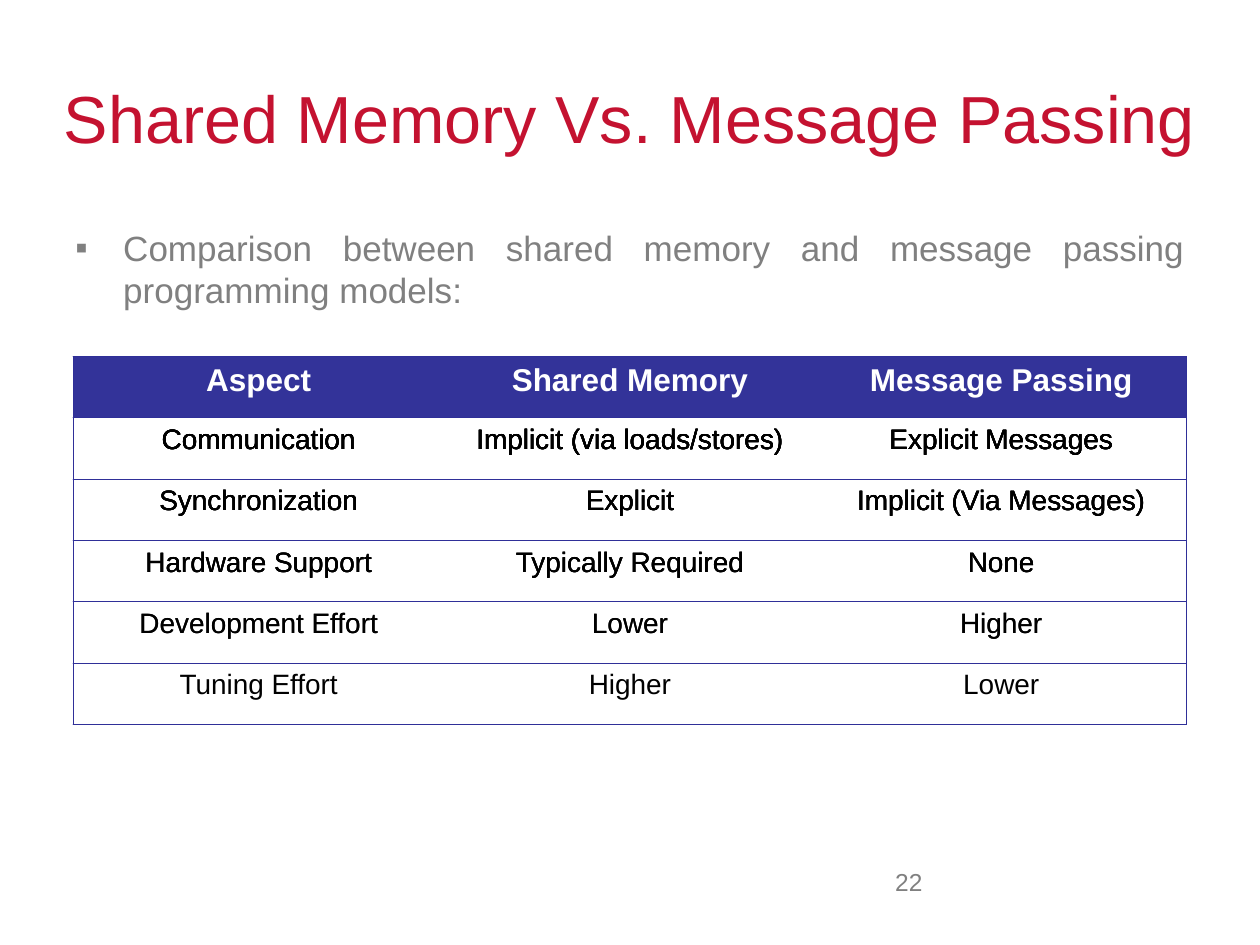
from lxml import etree
from pptx import Presentation
from pptx.dml.color import RGBColor
from pptx.enum.text import MSO_ANCHOR, PP_ALIGN
from pptx.oxml.ns import qn
from pptx.util import Inches, Pt

TITLE = "Shared Memory Vs. Message Passing"
INTRO = "Comparison between shared memory and message passing programming models:"
PAGE = "22"
ROWS = [
    ("Aspect", "Shared Memory", "Message Passing"),
    ("Communication", "Implicit (via loads/stores)", "Explicit Messages"),
    ("Synchronization", "Explicit", "Implicit (Via Messages)"),
    ("Hardware Support", "Typically Required", "None"),
    ("Development Effort", "Lower", "Higher"),
    ("Tuning Effort", "Higher", "Lower"),
]
RED, GRAY, BLACK, WHITE = "C41230", "808080", "000000", "FFFFFF"
HEADER, RULE = "333399", "2F2F98"


def rgb(value):
    return RGBColor.from_string(value)


def write(tf, text, size, color, align, bold=False):
    p = tf.paragraphs[0]
    p.alignment = align
    r = p.add_run()
    r.text = text
    r.font.name = "Arial"
    r.font.size = Pt(size)
    r.font.bold = bold
    r.font.color.rgb = rgb(color)
    return p


def add_text_frame(s, left, top, width, height):
    sp = s.shapes.add_textbox(Inches(left), Inches(top), Inches(width), Inches(height))
    sp.text_frame.word_wrap = True
    return sp.text_frame


def add_bullet(p, char, indent):
    pPr = p._p.get_or_add_pPr()
    pPr.set("marL", str(Inches(indent)))
    pPr.set("indent", str(-Inches(indent)))
    etree.SubElement(pPr, qn("a:buFont"), typeface="Arial")
    etree.SubElement(pPr, qn("a:buChar"), char=char)


def set_borders(cell, ruled_sides):
    """Rule the named sides (L, R, T, B) and clear the others."""
    tcPr = cell._tc.get_or_add_tcPr()
    for i, side in enumerate("LRTB"):
        ln = etree.Element(qn("a:ln" + side), w=str(Pt(0.75)))
        if side in ruled_sides:
            fill = etree.SubElement(ln, qn("a:solidFill"))
            etree.SubElement(fill, qn("a:srgbClr"), val=RULE)
        else:
            etree.SubElement(ln, qn("a:noFill"))
        tcPr.insert(i, ln)


def add_comparison(s, revealed):
    """Add one build step: body rows after the revealed ones are white."""
    n_rows, n_cols = len(ROWS), len(ROWS[0])
    table = s.shapes.add_table(n_rows, n_cols, Inches(0.58), Inches(2.83),
                               Inches(8.84), Inches(2.92)).table
    for i, row in enumerate(ROWS):
        for j, text in enumerate(row):
            cell = table.cell(i, j)
            if i == 0:
                cell.fill.solid()
                cell.fill.fore_color.rgb = rgb(HEADER)
                write(cell.text_frame, text, 18, WHITE, PP_ALIGN.CENTER, bold=True)
            else:
                cell.fill.background()
                color = BLACK if i <= revealed else WHITE
                write(cell.text_frame, text, 16, color, PP_ALIGN.CENTER)
            outer = {0: "L", n_cols - 1: "R"}.get(j, "")
            set_borders(cell, "TB" + outer)


prs = Presentation()
prs.slide_width, prs.slide_height = Inches(10), Inches(7.5)
s = prs.slides.add_slide(prs.slide_layouts[6])

tf = add_text_frame(s, 0.5, 0.3, 9, 1.25)
tf.margin_left = tf.margin_right = 0
tf.vertical_anchor = MSO_ANCHOR.MIDDLE
write(tf, TITLE, 38, RED, PP_ALIGN.CENTER)

tf = add_text_frame(s, 0.5, 1.75, 9, 4.95)
add_bullet(write(tf, INTRO, 20, GRAY, PP_ALIGN.JUSTIFY), "▪", 0.38)

tf = add_text_frame(s, 6.5, 6.83, 0.92, 0.52)
write(tf, PAGE, 14, GRAY, PP_ALIGN.RIGHT)

for revealed in range(1, len(ROWS)):
    add_comparison(s, revealed)
prs.save("out.pptx")
